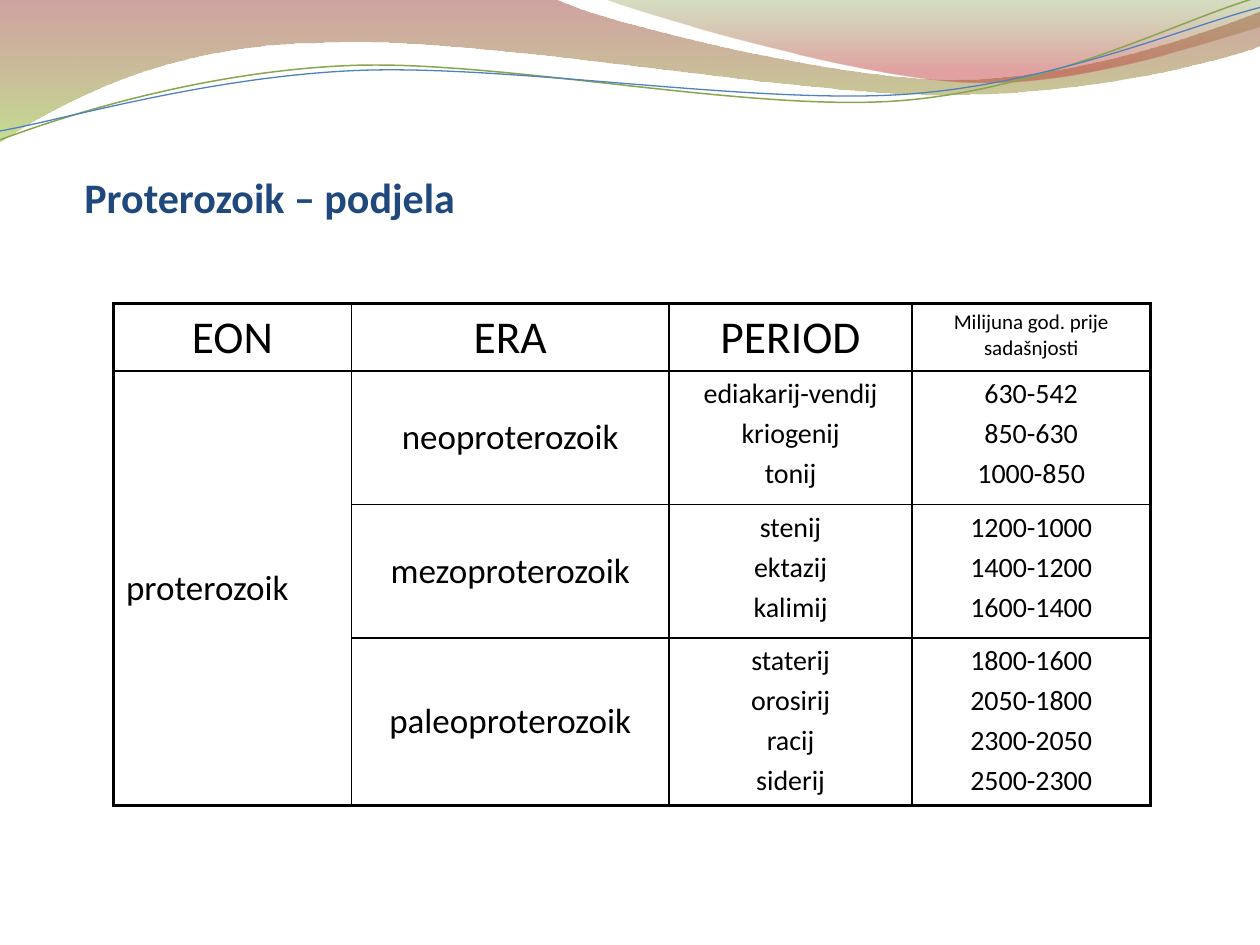
import math

import pptx
import pptx.util
import pptx.oxml
import pptx.oxml.ns
from pptx.dml.color import RGBColor
from pptx.enum.text import MSO_ANCHOR, PP_ALIGN
from pptx.util import Inches, Pt

FONT = "Calibri"
BLACK = RGBColor(0x00, 0x00, 0x00)
NAVY = RGBColor(0x1F, 0x49, 0x7D)
GREEN = RGBColor(0x89, 0xA5, 0x4F)
BLUE = RGBColor(0x4F, 0x81, 0xBD)
DARK_RED = RGBColor(0x97, 0x33, 0x30)
LIME = RGBColor(0x95, 0xC2, 0x38)
OLIVE = RGBColor(0x76, 0x95, 0x37)
RED = RGBColor(0xBE, 0x33, 0x30)

TITLE = "Proterozoik – podjela"
HEADERS = [("EON", 26), ("ERA", 26), ("PERIOD", 26), ("Milijuna god. prije sadašnjosti", 12)]
EON = "proterozoik"
ERAS = [
    ("neoproterozoik", [("ediakarij-vendij", "630-542"), ("kriogenij", "850-630"),
                        ("tonij", "1000-850")]),
    ("mezoproterozoik", [("stenij", "1200-1000"), ("ektazij", "1400-1200"),
                         ("kalimij", "1600-1400")]),
    ("paleoproterozoik", [("staterij", "1800-1600"), ("orosirij", "2050-1800"),
                          ("racij", "2300-2050"), ("siderij", "2500-2300")]),
]
COL_WIDTHS = [1.89, 2.52, 1.93, 1.89]
ROW_HEIGHTS = [0.53, 1.06, 1.06, 1.33]

BANDS = [
    ([[(0, -0.01)], [(4.4, -0.01)],
      [(4.76, 0.17), (6.64, 0.63), (7.58, 0.63)], [(8.53, 0.63), (9.58, 0.26), (10, 0.09)],
      [(10.01, 0.36)], [(9.83, 0.44), (8.7, 0.76), (7.46, 0.75)],
      [(6.22, 0.75), (3.82, 0.28), (2.57, 0.34)], [(1.29, 0.35), (0.46, 0.83), (-0.01, 1.13)]],
     [(0, DARK_RED, 45), (1, LIME, 55)]),
    ([[(4.79, -0.01)], [(5.09, 0.11), (6.82, 0.62), (7.69, 0.65)],
      [(8.56, 0.69), (9.61, 0.32), (10, 0.21)], [(10, 0)]],
     [(0, OLIVE, 30), (0.8, RED, 45)]),
]
WAVE_TILT = -2.7
WAVES = [
    ([[(0, 1.11)], [(0.48, 0.93), (1.58, 0.57), (2.77, 0.52)],
      [(3.95, 0.47), (5.93, 0.89), (7.13, 0.8)], [(8.33, 0.71), (9.38, 0.15), (9.98, -0.02)]],
     (4.99, 0.58), GREEN, 0.85),
    ([[(0, 1.04)], [(0.47, 0.96), (1.64, 0.61), (2.83, 0.56)],
      [(4.03, 0.51), (5.97, 0.83), (7.17, 0.75)], [(8.36, 0.67), (9.41, 0.21), (10, 0.06)]],
     (5, 0.59), BLUE, 0.75),
]


def add_outline(s, steps, close):
    points = [(Inches(x), Inches(y)) for step in steps for x, y in step]
    builder = s.shapes.build_freeform(*points[0])
    builder.add_line_segments(points[1:], close=close)
    sp = builder.convert_to_shape()
    sp.shadow.inherit = False
    path = sp._element.spPr.find(".//" + pptx.oxml.ns.qn("a:path"))
    lines = iter(path.findall(pptx.oxml.ns.qn("a:lnTo")))
    for step in steps[1:]:
        segment = [next(lines) for _ in step]
        if len(step) == 3:
            curve = pptx.oxml.parse_xml(f'<a:cubicBezTo {pptx.oxml.ns.nsdecls("a")}/>')
            segment[0].addprevious(curve)
            for line in segment:
                curve.append(line[0])
                path.remove(line)
    return sp


def add_band(s, steps, stops):
    sp = add_outline(s, steps, True)
    sp.line.fill.background()
    sp.fill.gradient()
    sp.fill.gradient_angle = 270
    elements = sp._element.spPr.findall(".//" + pptx.oxml.ns.qn("a:gs"))
    for stop, element, (position, color, opacity) in zip(sp.fill.gradient_stops, elements, stops):
        stop.color.rgb = color
        stop.position = position
        element[0].append(pptx.oxml.parse_xml(
            f'<a:alpha {pptx.oxml.ns.nsdecls("a")} val="{opacity * 1000}"/>'))


def turn(point, center, degrees):
    dx, dy = point[0] - center[0], point[1] - center[1]
    cos, sin = math.cos(math.radians(degrees)), math.sin(math.radians(degrees))
    return center[0] + dx * cos - dy * sin, center[1] + dx * sin + dy * cos


def add_wave(s, steps, center, color, width):
    level = [[turn(point, center, -WAVE_TILT) for point in step] for step in steps]
    sp = add_outline(s, level, False)
    sp.rotation = WAVE_TILT
    sp.fill.background()
    sp.line.color.rgb = color
    sp.line.width = Pt(width)


def write(tf, lines, size, color=BLACK, align=PP_ALIGN.CENTER, bold=False):
    for i, line in enumerate(lines):
        p = tf.paragraphs[0] if i == 0 else tf.add_paragraph()
        p.text = line
        p.alignment = align
        if i:
            p.space_before = Pt(size * 0.2)
        p.font.name = FONT
        p.font.size = Pt(size)
        p.font.bold = bold
        p.font.color.rgb = color


def set_borders(cell, outer):
    tcPr = cell._tc.get_or_add_tcPr()
    for side in "LRTB":
        width = Pt(2.25 if side in outer else 1)
        tcPr.append(pptx.oxml.parse_xml(
            f'<a:ln{side} {pptx.oxml.ns.nsdecls("a")} w="{width}"><a:solidFill>'
            f'<a:srgbClr val="{BLACK}"/></a:solidFill></a:ln{side}>'))
    cell.fill.background()


def add_division_table(s):
    rows, cols = len(ROW_HEIGHTS), len(COL_WIDTHS)
    table = s.shapes.add_table(rows, cols, Inches(0.9), Inches(2.41),
                               Inches(sum(COL_WIDTHS)), Inches(sum(ROW_HEIGHTS))).table
    table.first_row = table.horz_banding = False
    for col, width in zip(table.columns, COL_WIDTHS):
        col.width = Inches(width)
    for row, height in zip(table.rows, ROW_HEIGHTS):
        row.height = Inches(height)
    for r in range(rows):
        for c in range(cols):
            edges = {"L": c == 0, "R": c == cols - 1, "T": r == 0,
                     "B": r == rows - 1 or (r, c) == (1, 0)}
            set_borders(table.cell(r, c), [side for side in edges if edges[side]])
    eon_cell = table.cell(1, 0)
    eon_cell.merge(table.cell(rows - 1, 0))

    for c, (text, size) in enumerate(HEADERS):
        write(table.cell(0, c).text_frame, [text], size)
    write(eon_cell.text_frame, [EON], 20, align=PP_ALIGN.LEFT)
    eon_cell.vertical_anchor = MSO_ANCHOR.MIDDLE
    for r, (era, periods) in enumerate(ERAS, 1):
        write(table.cell(r, 1).text_frame, [era], 20)
        table.cell(r, 1).vertical_anchor = MSO_ANCHOR.MIDDLE
        for c, lines in enumerate(zip(*periods), 2):
            write(table.cell(r, c).text_frame, lines, 16)


def main():
    prs = pptx.Presentation()
    prs.slide_width, prs.slide_height = Inches(10), Inches(7.5)
    s = prs.slides.add_slide(prs.slide_layouts[6])
    for band in BANDS:
        add_band(s, *band)
    for wave in WAVES:
        add_wave(s, *wave)
    tf = s.shapes.add_textbox(Inches(0.67), Inches(0.65), Inches(8.75), Inches(1.13)).text_frame
    tf.word_wrap = True
    tf.vertical_anchor = MSO_ANCHOR.BOTTOM
    tf.margin_left = tf.margin_right = 0
    tf.margin_bottom = Inches(0.02)
    write(tf, [TITLE], 24, NAVY, PP_ALIGN.LEFT, True)
    add_division_table(s)
    prs.save("out.pptx")


if __name__ == "__main__":
    main()
